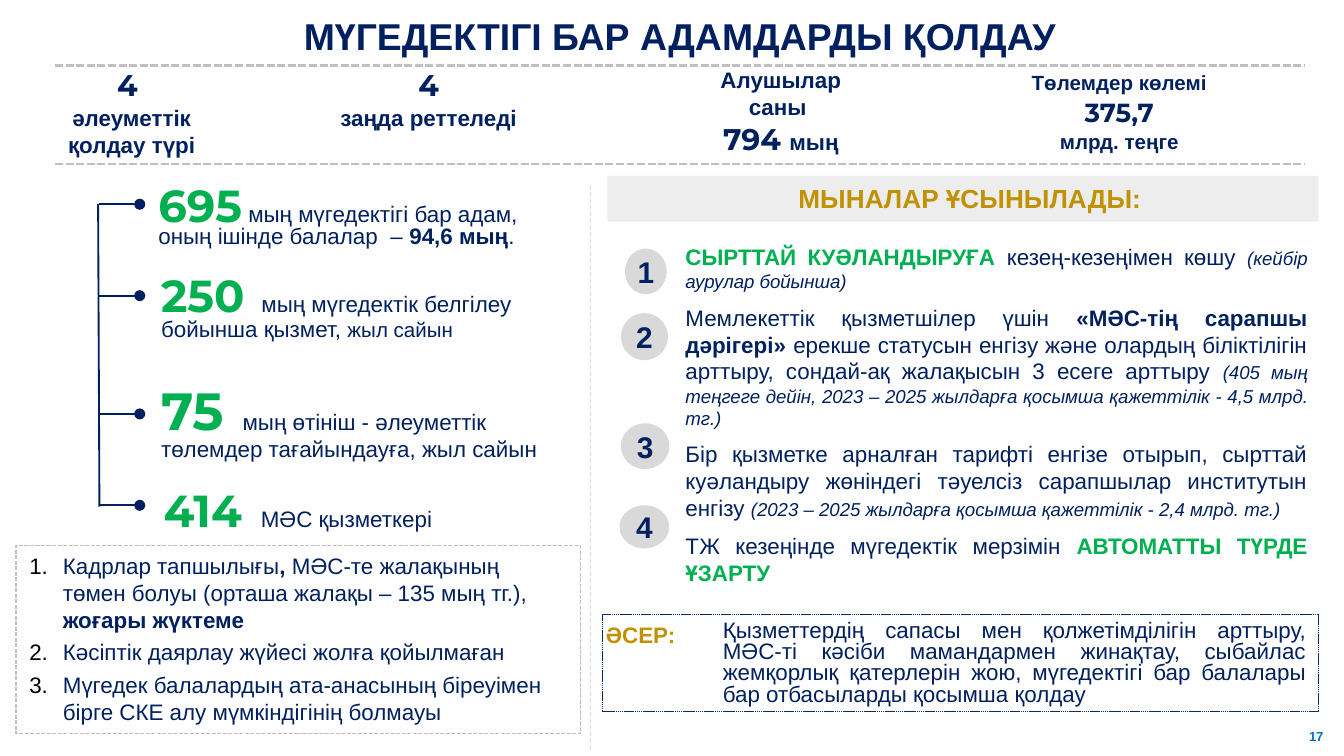
"""Build the slide on support for people with disabilities."""
import pptx
import pptx.util
import pptx.dml.color
import pptx.enum.dml
import pptx.enum.shapes
import pptx.enum.text
import lxml.etree
from dataclasses import dataclass, field
from pptx.util import Inches

ALIGN = pptx.enum.text.PP_ALIGN
ANCHOR = pptx.enum.text.MSO_ANCHOR
DASH = pptx.enum.dml.MSO_LINE
SHAPE = pptx.enum.shapes.MSO_SHAPE
RGB = pptx.dml.color.RGBColor.from_string


@dataclass
class Theme:
    navy: str = "002060"
    green: str = "00B050"
    gold: str = "C09100"
    blue: str = "0070CE"
    frame: str = "0A2D5D"
    rule: str = "BFBFBF"
    disc: str = "D9D9D9"
    band: str = "EDEDED"
    black: str = "000000"
    styles: dict = field(default_factory=dict)

    def __post_init__(self):
        text, display = "Arial", "Montserrat"
        self.styles = {
            "title": (text, 20, self.navy, True, False),
            "number": (text, 16, self.navy, True, False),
            "heading": (text, 14, self.gold, True, False),
            "effect": (text, 12, self.gold, True, False),
            "body": (text, 12, self.navy, False, False),
            "bold": (text, 12, self.navy, True, False),
            "key": (text, 12, self.green, True, False),
            "small": (text, 11, self.navy, False, False),
            "small bold": (text, 11, self.navy, True, False),
            "note": (text, 10, self.navy, False, True),
            "page": (text, 7, self.blue, True, False),
            "stat": (display, 16, self.navy, True, False),
            "sum": (display, 14, self.navy, True, False),
            "figure": (display, 24, self.green, True, False),
            "big figure": (display, 28, self.green, True, False),
            "gap": (display, 32, self.green, True, False),
            "big gap": (display, 36, self.green, True, False),
        }


theme = Theme()


def write(box, paragraphs, align=ALIGN.LEFT, insets=(0.1, 0.05, 0.1, 0.05), anchor=ANCHOR.TOP,
          before=0, after=0, spacing=None, numbered=False):
    frame = box.text_frame
    frame.word_wrap = True
    frame.auto_size = pptx.enum.text.MSO_AUTO_SIZE.NONE
    frame.vertical_anchor = anchor
    frame.margin_left, frame.margin_top, frame.margin_right, frame.margin_bottom = map(Inches, insets)
    for index, spans in enumerate(paragraphs):
        para = frame.add_paragraph() if index else frame.paragraphs[0]
        para.alignment = align
        para.space_before = pptx.util.Pt(before)
        para.space_after = pptx.util.Pt(after)
        if spacing:
            para.line_spacing = spacing
        if numbered:
            properties = para._p.get_or_add_pPr()
            properties.set("marL", str(Inches(0.25)))
            properties.set("indent", str(Inches(-0.25)))
            colour = lxml.etree.SubElement(properties, pptx.oxml.ns.qn("a:buClr"))
            lxml.etree.SubElement(colour, pptx.oxml.ns.qn("a:srgbClr"), val=theme.black)
            lxml.etree.SubElement(properties, pptx.oxml.ns.qn("a:buAutoNum"), type="arabicPeriod")
        for text, style in spans:
            span = para.add_run()
            span.text = text
            font = para.font if len(spans) == 1 else span.font
            font.name, size, colour, font.bold, font.italic = theme.styles[style]
            font.size = pptx.util.Pt(size)
            font.color.rgb = RGB(colour)


def draw_line(start, end, colour, width, dash=None, dot=False):
    line = page.shapes.add_connector(pptx.enum.shapes.MSO_CONNECTOR.STRAIGHT,
                                     *map(Inches, start + end))
    line.line.color.rgb = RGB(colour)
    line.line.width = pptx.util.Pt(width)
    if dash:
        line.line.dash_style = dash
    if dot:
        lxml.etree.SubElement(line.line._get_or_add_ln(), pptx.oxml.ns.qn("a:tailEnd"), type="oval")
    lxml.etree.SubElement(line._element.spPr, pptx.oxml.ns.qn("a:effectLst"))


deck = pptx.Presentation()
deck.slide_width = Inches(10)
deck.slide_height = deck.slide_width * 9 // 16
page = deck.slides.add_slide(deck.slide_layouts[5])
tight = (0.01, 0.01, 0, 0)

title = page.shapes.title
title.left, title.top, title.width, title.height = map(Inches, (0.4, 0.09, 9.31, 0.35))
write(title, [[("МҮГЕДЕКТІГІ БАР АДАМДАРДЫ ҚОЛДАУ", "title")]], ALIGN.CENTER, tight, before=0.8)

for y in (0.49, 1.22):
    draw_line((0.41, y), (9.71, y), theme.rule, 1.42, DASH.SQUARE_DOT)

stats = [
    (0.29, 0.49, 0.7, [[("4 ", "stat")], [("әлеуметтік қолдау түрі", "bold")]]),
    (2.5, 0.49, 0.5, [[("4", "stat")], [("заңда реттеледі", "bold")]]),
    (5.12, 0.48, 0.7, [[("Алушылар саны ", "bold")], [("794 ", "stat"), ("мың", "bold")]]),
    (7.66, 0.51, 0.66, [[("Төлемдер көлемі ", "small bold")], [("375,7", "sum"), (" ", "small bold")],
                        [("млрд. теңге ", "small bold")]]),
]
for x, y, height, paragraphs in stats:
    box = page.shapes.add_textbox(Inches(x), Inches(y), Inches(1.37), Inches(height))
    write(box, paragraphs, ALIGN.CENTER, tight, before=0.8)

draw_line((0.73, 1.52), (0.74, 3.77), theme.navy, 1)
for y in (1.52, 2.2, 3.08, 3.76):
    draw_line((0.74, y), (1.04, y), theme.navy, 1, dot=True)

figures = [
    (1.08, 1.38, 3.18, 0.53, 0.7, [
        ("695", "figure"), (" мың мүгедектігі бар адам, оның ішінде балалар  – ", "body"),
        ("94,6 мың", "bold"), (".", "body")]),
    (1.1, 1.98, 3.22, 0.62, 0.7, [
        ("250", "figure"), (" ", "gap"), ("мың мүгедектік белгілеу бойынша қызмет, ", "body"),
        ("жыл сайын", "small")]),
    (1.1, 2.82, 3.22, 0.67, 0.7, [
        ("75", "big figure"), (" ", "big gap"),
        ("мың өтініш - әлеуметтік төлемдер тағайындауға, жыл сайын", "body")]),
    (1.12, 3.49, 3.07, 0.59, 0.8, [
        ("414", "figure"), (" ", "big gap"), ("МӘС қызметкері", "body")]),
]
for x, y, width, height, spacing, spans in figures:
    box = page.shapes.add_textbox(Inches(x), Inches(y), Inches(width), Inches(height))
    write(box, [spans], spacing=spacing)

problems = page.shapes.add_shape(SHAPE.RECTANGLE, Inches(0.12), Inches(4.06), Inches(4.2), Inches(1.4))
effect_frame = page.shapes.add_shape(SHAPE.RECTANGLE, Inches(4.48), Inches(4.57), Inches(5.33), Inches(0.72))
for box, colour, width in ((problems, theme.rule, 0.75), (effect_frame, theme.frame, 0.25)):
    box.shadow.inherit = False
    box.fill.background()
    box.line.color.rgb = RGB(colour)
    box.line.width = pptx.util.Pt(width)
    box.line.dash_style = DASH.SQUARE_DOT
write(problems, [
    [("Кадрлар тапшылығы", "body"), (",", "bold"),
     (" МӘС-те жалақының төмен болуы (орташа жалақы – 135 мың тг.),  ", "body"),
     ("жоғары жүктеме", "bold")],
    [("Кәсіптік даярлау жүйесі жолға қойылмаған", "body")],
    [("Мүгедек балалардың ата-анасының біреуімен бірге СКЕ алу мүмкіндігінің болмауы", "body")],
], after=3, numbered=True)

draw_line((4.39, 1.38), (4.39, 5.59), theme.disc, 0.5, DASH.DASH)

heading = page.shapes.add_shape(SHAPE.RECTANGLE, Inches(4.52), Inches(1.31), Inches(5.29), Inches(0.34))
heading.shadow.inherit = False
heading.fill.solid()
heading.fill.fore_color.rgb = RGB(theme.band)
heading.line.fill.background()
write(heading, [[("МЫНАЛАР ҰСЫНЫЛАДЫ:", "heading")]], ALIGN.CENTER, (0.2, 0.05, 0.1, 0.05))

discs = [(4.65, 1.85, 0.31, 0.34), (4.62, 2.33, 0.35, 0.35), (4.62, 3.15, 0.36, 0.34), (4.61, 3.76, 0.37, 0.32)]
for number, place in enumerate(discs, 1):
    disc = page.shapes.add_shape(SHAPE.OVAL, *map(Inches, place))
    disc.shadow.inherit = False
    disc.fill.solid()
    disc.fill.fore_color.rgb = RGB(theme.disc)
    disc.line.fill.background()
    write(disc, [[(str(number), "number")]], ALIGN.CENTER, (0, 0, 0, 0), ANCHOR.MIDDLE)

proposals = page.shapes.add_textbox(Inches(5.01), Inches(1.77), Inches(4.81), Inches(2.66))
write(proposals, [
    [("СЫРТТАЙ КУӘЛАНДЫРУҒА ", "key"), ("кезең-кезеңімен көшу ", "body"),
     ("(кейбір аурулар бойынша)", "note")],
    [("Мемлекеттік қызметшілер үшін ", "body"), ("«МӘС-тің сарапшы дәрігері» ", "bold"),
     ("ерекше статусын енгізу және олардың біліктілігін арттыру, сондай-ақ жалақысын 3 есеге арттыру ", "body"),
     ("(405 мың теңгеге дейін, 2023 – 2025 жылдарға қосымша қажеттілік - 4,5 млрд. тг.)", "note")],
    [("Бір қызметке арналған тарифті енгізе отырып, сырттай куәландыру жөніндегі тәуелсіз "
      "сарапшылар институтын енгізу ", "body"),
     ("(2023 – 2025 жылдарға қосымша қажеттілік - 2,4 млрд. тг.)", "note")],
    [("ТЖ кезеңінде мүгедектік мерзімін ", "body"), ("АВТОМАТТЫ ТҮРДЕ ҰЗАРТУ ", "key")],
], ALIGN.JUSTIFY, (0.09, 0.04, 0.09, 0.04), after=6)

effect_label = page.shapes.add_textbox(Inches(4.41), Inches(4.57), Inches(1.31), Inches(0.3))
write(effect_label, [[("ӘСЕР:", "effect")]])
effect = page.shapes.add_textbox(Inches(5.28), Inches(4.57), Inches(4.54), Inches(0.75))
write(effect, [[("Қызметтердің сапасы мен қолжетімділігін арттыру, МӘС-ті кәсіби мамандармен жинақтау, "
                 "сыбайлас жемқорлық қатерлерін жою, мүгедектігі бар балалары бар отбасыларды "
                 "қосымша қолдау", "body")]], ALIGN.JUSTIFY, spacing=0.8)

page_number = page.shapes.add_textbox(Inches(9.67), Inches(5.38), Inches(0.27), Inches(0.19))
write(page_number, [[("17", "page")]], insets=(0.07, 0.04, 0.07, 0.04))

deck.save("out.pptx")
